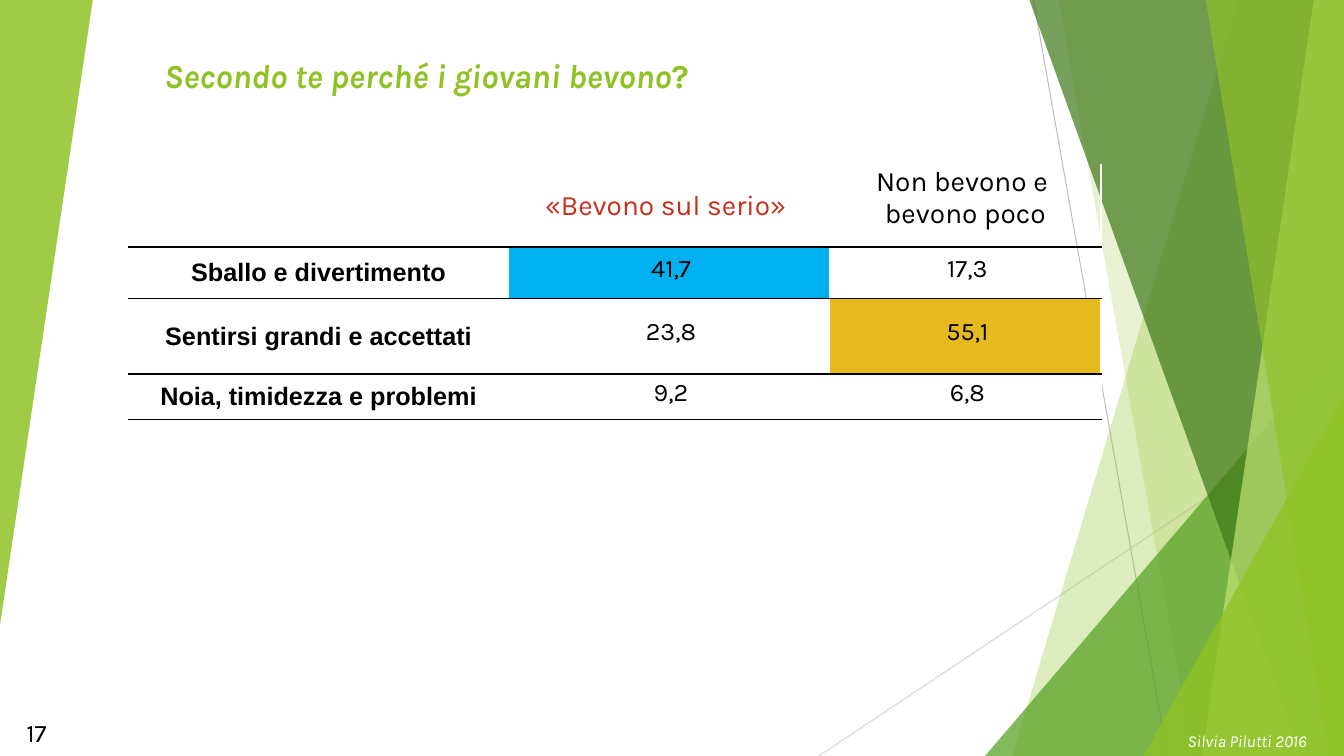
from dataclasses import dataclass

from lxml import etree
from pptx import Presentation
from pptx import util as u
from pptx.dml.color import RGBColor
from pptx.enum import shapes, text
from pptx.oxml import ns


@dataclass(frozen=True)
class Theme:
    lime: str = "90C226"
    pale_lime: str = "C0E474"
    green: str = "54A021"
    dark_green: str = "3F7819"
    white: str = "FFFFFF"
    black: str = "000000"
    red: str = "C42F1A"
    blue: str = "00B0F0"
    gold: str = "E6B91E"
    grey: str = "BFBFBF"
    light_grey: str = "D9D9D9"
    font: str = "Karla"
    label_font: str = "Arial"
    title_size: int = 24
    header_size: int = 20
    body_size: int = 18
    credit_size: int = 12


THEME = Theme()
WIDTH, HEIGHT = 13.33, 7.5
CENTER, RIGHT, LEFT = text.PP_ALIGN.CENTER, text.PP_ALIGN.RIGHT, text.PP_ALIGN.LEFT
MIDDLE, TOP, BOTTOM = text.MSO_ANCHOR.MIDDLE, text.MSO_ANCHOR.TOP, text.MSO_ANCHOR.BOTTOM


def inches(*lengths):
    return [u.Inches(length) for length in lengths]


def add_span(para, words, size, color, font=THEME.font, bold=False, italic=False):
    span = para.add_run()
    span.text = words
    span.font.name, span.font.size = font, u.Pt(size)
    span.font.bold, span.font.italic = bold, italic
    span.font.color.rgb = RGBColor.from_string(color)


def add_text_box(page, area, anchor, align):
    """Add an empty text box and return its first paragraph."""
    box = page.shapes.add_textbox(*inches(*area))
    box.text_frame.word_wrap = True
    box.text_frame.vertical_anchor = anchor
    para = box.text_frame.paragraphs[0]
    para.alignment = align
    return para


# Background facets
def paint(shape, color, opacity):
    shape.shadow.inherit = False
    shape.line.fill.background()
    shape.fill.solid()
    shape.fill.fore_color.rgb = RGBColor.from_string(color)
    tint = shape.fill._xPr.find(".//" + ns.qn("a:srgbClr"))
    etree.SubElement(tint, ns.qn("a:alpha"), val=str(opacity * 1000))


def add_ray(page, start, end, color):
    ray = page.shapes.add_connector(shapes.MSO_CONNECTOR.STRAIGHT, *inches(*start, *end))
    ray.line.color.rgb = RGBColor.from_string(color)
    ray.line.width = u.Pt(0.75)
    etree.SubElement(ray._element.spPr, ns.qn("a:effectLst"))


def add_band(page, box, top_x, bottom_x, color, opacity):
    """Fill the box from a slanted left edge to its right side."""
    left, top, width, height = box
    right, bottom = left + width, top + height
    corners = [(top_x, top), (right, top), (right, bottom), (bottom_x, bottom)]
    points = [tuple(inches(*corner)) for corner in corners]
    outline = page.shapes.build_freeform(*points[0])
    outline.add_line_segments(points[1:], close=True)
    paint(outline.convert_to_shape(), color, opacity)


def add_wedge(page, area, color, opacity, rotation=0):
    wedge = page.shapes.add_shape(shapes.MSO_SHAPE.ISOSCELES_TRIANGLE, *inches(*area))
    wedge.adjustments[0] = 1
    wedge.rotation = rotation
    paint(wedge, color, opacity)


def add_corner(page, box, left, top, color, opacity):
    """Add a wedge that ends in the lower right corner of the box."""
    right, bottom = box[0] + box[2], box[1] + box[3]
    add_wedge(page, (left, top, right - left, bottom - top), color, opacity)


def add_background(page, box):
    left, top, width, height = box
    right, bottom = left + width, top + height
    add_ray(page, (10.25, top), (11.58, bottom), THEME.grey)
    add_ray(page, (right, 4.03), (8.12, bottom), THEME.light_grey)
    add_band(page, box, 12.28, 10.04, THEME.lime, 30)
    add_band(page, box, 10.5, 11.83, THEME.lime, 20)
    add_corner(page, box, 9.77, 3.33, THEME.green, 72)
    add_band(page, box, 10.21, 12.91, THEME.dark_green, 70)
    add_band(page, box, 13.03, 11.92, THEME.pale_lime, 70)
    add_band(page, box, 11.96, 13.18, THEME.lime, 65)
    add_corner(page, box, 11.34, 3.93, THEME.lime, 80)
    add_wedge(page, (left, top, 0.92, 6.2), THEME.lime, 85, rotation=180)


# Title
def add_title(page, box):
    para = add_text_box(page, box, BOTTOM, RIGHT)
    add_span(para, "Secondo te perché i giovani bevono", THEME.title_size, THEME.lime,
             bold=True, italic=True)
    add_span(para, "?", THEME.title_size, THEME.lime, bold=True)


# Answers table
def set_borders(cell, top_color):
    """Draw white sides and black rules; the borders come before the fill."""
    colors = {"a:lnL": THEME.white, "a:lnR": THEME.white,
              "a:lnT": top_color, "a:lnB": THEME.black}
    props = cell._tc.get_or_add_tcPr()
    for place, (tag, color) in enumerate(colors.items()):
        border = etree.Element(ns.qn(tag), w=str(u.Pt(1)))
        if color:
            solid = etree.SubElement(border, ns.qn("a:solidFill"))
            etree.SubElement(solid, ns.qn("a:srgbClr"), val=color)
        else:
            etree.SubElement(border, ns.qn("a:noFill"))
        props.insert(place, border)


def style_cell(cell, fill=None, top_color=THEME.black, anchor=MIDDLE, inset=0.01):
    if fill:
        cell.fill.solid()
        cell.fill.fore_color.rgb = RGBColor.from_string(fill)
    else:
        cell.fill.background()
    cell.margin_left = cell.margin_top = cell.margin_right = u.Inches(inset)
    cell.margin_bottom = 0
    cell.vertical_anchor = anchor
    set_borders(cell, top_color)


def write_cell(cell, lines, size, color=THEME.black, font=THEME.font, bold=False):
    for number, line in enumerate(lines):
        frame = cell.text_frame
        para = frame.add_paragraph() if number else frame.paragraphs[0]
        para.alignment = CENTER
        add_span(para, line, size, color, font, bold)


def add_answers(page, box):
    column_shares, row_heights = (3.76, 3.19, 2.69), (0.82, 0.51, 0.75, 0.45)
    answers = [("Sballo e divertimento", "41,7", "17,3"),
               ("Sentirsi grandi e accettati", "23,8", "55,1"),
               ("Noia, timidezza e problemi", "9,2", "6,8")]
    highlights = {(1, 0): THEME.white, (1, 1): THEME.blue, (2, 2): THEME.gold}

    table = page.shapes.add_table(len(row_heights), len(column_shares), *inches(*box)).table
    table.first_row = table.horz_banding = False
    for column, share in zip(table.columns, column_shares):
        column.width = u.Inches(box[2] * share / sum(column_shares))
    for row, height in zip(table.rows, row_heights):
        row.height = u.Inches(height)

    blank, drinkers, others = (table.cell(0, column) for column in range(3))
    style_cell(blank, top_color=THEME.white)
    style_cell(drinkers, top_color=None)
    style_cell(others, top_color=None, anchor=TOP)
    write_cell(drinkers, ["«Bevono sul serio» "], THEME.header_size, THEME.red)
    write_cell(others, ["Non bevono e ", "bevono poco"], THEME.header_size)

    for row, (label, *values) in enumerate(answers, start=1):
        label_cell = table.cell(row, 0)
        style_cell(label_cell, highlights.get((row, 0)))
        write_cell(label_cell, [label], THEME.body_size, font=THEME.label_font, bold=True)
        for column, value in enumerate(values, start=1):
            cell = table.cell(row, column)
            style_cell(cell, highlights.get((row, column)), inset=0)
            write_cell(cell, [value], THEME.body_size)
            para = cell.text_frame.paragraphs[0]
            para.line_spacing = u.Pt(16)
            para._p.get_or_add_pPr().set("marL", str(u.Inches(0.04)))


# Footer
def add_footer(page, box):
    left, top, width, height = box
    credit = add_text_box(page, (left + 11.68, top + 0.13, 1.79, 0.3), TOP, LEFT)
    add_span(credit, "Silvia Pilutti 2016", THEME.credit_size, THEME.white, italic=True)
    number = add_text_box(page, (left, top, 0.56, 0.4), MIDDLE, RIGHT)
    add_span(number, "17", THEME.body_size, THEME.black)


def main():
    deck = Presentation()
    deck.slide_width, deck.slide_height = inches(WIDTH, HEIGHT)
    page = deck.slides.add_slide(deck.slide_layouts[6])
    add_background(page, (0, 0, WIDTH, HEIGHT))
    add_title(page, (0.46, 0.46, 6.47, 0.53))
    add_answers(page, (1.28, 1.63, 9.64, 2.53))
    add_footer(page, (0, 7.07, WIDTH, 0.43))
    deck.save("out.pptx")


if __name__ == "__main__":
    main()
